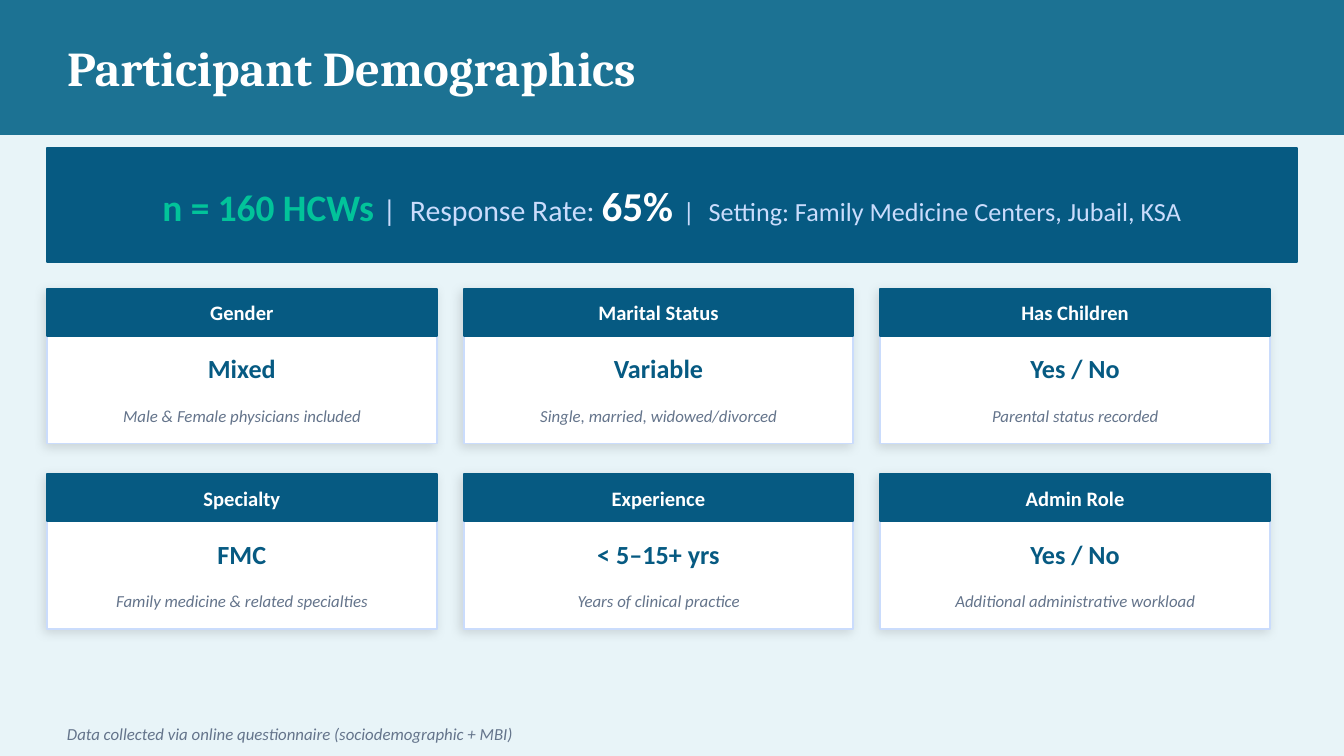
from lxml import etree
from pptx import Presentation
from pptx.dml.color import RGBColor
from pptx.enum.shapes import MSO_SHAPE
from pptx.enum.text import MSO_ANCHOR, MSO_AUTO_SIZE, PP_ALIGN
from pptx.util import Pt

RECT = MSO_SHAPE.RECTANGLE
MID = MSO_ANCHOR.MIDDLE
FIXED = MSO_AUTO_SIZE.NONE
LEFT, CENTER = PP_ALIGN.LEFT, PP_ALIGN.CENTER

INK = {
    "page": "E8F4F8", "band": "1C7293", "navy": "065A82", "white": "FFFFFF",
    "pale": "CADCFC", "mint": "02C39A", "gray": "64748B",
}
SHADE = (
    '<a:effectLst xmlns:a="http://schemas.openxmlformats.org/drawingml/2006/main">'
    '<a:outerShdw blurRad="76200" dist="25400" dir="8100000" algn="bl" rotWithShape="0">'
    '<a:srgbClr val="000000"><a:alpha val="12000"/></a:srgbClr>'
    '</a:outerShdw></a:effectLst>'
)


def tint(name):
    return RGBColor.from_string(INK[name])


class Deck:
    """Holds the style and the current slide; all lengths are in points."""

    def __init__(self, wide, high):
        self.file = Presentation()
        self.file.slide_width, self.file.slide_height = Pt(wide), Pt(high)
        self.slide = self.file.slides.add_slide(self.file.slide_layouts[5])
        fill = self.slide.background.fill
        fill.solid()
        fill.fore_color.rgb = tint("page")

    def style(self, font, size, ink, bold=False, slant=False, face="Calibri"):
        font.name, font.size = face, Pt(size)
        font.bold, font.italic = bold, slant
        font.color.rgb = tint(ink)

    def frame(self, shape, align, inset=True):
        frame = shape.text_frame
        frame.word_wrap, frame.auto_size = True, FIXED
        frame.vertical_anchor = MID
        if not inset:
            frame.margin_left = frame.margin_right = 0
            frame.margin_top = frame.margin_bottom = 0
        par = frame.paragraphs[0]
        par.alignment = align
        return par

    def title(self, box, text):
        shape = self.slide.shapes.title
        shape.left, shape.top, shape.width, shape.height = map(Pt, box)
        par = self.frame(shape, LEFT)
        par.text = text
        self.style(par.font, 26, "white", bold=True, face="Cambria")
        # Bring the title in front of its band
        self.slide.shapes._spTree.append(shape._element)

    def panel(self, box, fill, line, shade=False):
        shape = self.slide.shapes.add_shape(RECT, *map(Pt, box))
        shape.shadow.inherit = False
        shape.fill.solid()
        shape.fill.fore_color.rgb = tint(fill)
        shape.line.color.rgb = tint(line)
        shape.line.width = Pt(1)
        if shade:
            props = shape._element.spPr
            props.replace(props.find("{*}effectLst"), etree.fromstring(SHADE))

    def label(self, box, text, size, ink, bold=False, slant=False,
              align=CENTER, inset=False):
        shape = self.slide.shapes.add_textbox(*map(Pt, box))
        par = self.frame(shape, align, inset)
        par.text = text
        self.style(par.font, size, ink, bold, slant)

    def strip(self, box, runs):
        shape = self.slide.shapes.add_textbox(*map(Pt, box))
        par = self.frame(shape, CENTER)
        for text, size, ink, bold, gap in runs:
            run = par.add_run()
            run.text = text
            self.style(run.font, size, ink, bold)
            if gap:  # letter spacing, in hundredths of a point
                run._r.get_or_add_rPr().set("spc", str(gap))

    def card(self, x, y, head, value, note):
        wide = 208.8
        top = (x, y, wide, 25.2)
        self.panel((x, y, wide, 82.8), "white", "pale", shade=True)
        self.panel(top, "navy", "navy")
        self.label(top, head, 11, "white", bold=True)
        self.label((x, y + 27.36, wide, 30.24), value, 14, "navy", bold=True)
        self.label((x + 7.2, y + 57.6, wide - 14.4, 20.16), note, 9, "gray", slant=True)


def main():
    deck = Deck(720, 405)

    # Title band
    deck.panel((0, 0, 720, 72), "band", "band")
    deck.title((28.8, 0, 662.4, 72), "Participant Demographics")

    # Key figures
    box = (25.2, 79.2, 669.6, 61.2)
    deck.panel(box, "navy", "navy")
    deck.strip(box, [
        ("n = 160 HCWs ", 20, "mint", True, 0),
        ("| ", 16, "pale", False, 180),
        ("Response Rate: ", 16, "pale", False, 0),
        ("65%", 22, "white", True, 0),
        (" | ", 14, "pale", False, 210),
        ("Setting: Family Medicine Centers, Jubail, KSA", 14, "pale", False, 0),
    ])

    # Cards, three to a row
    cards = [
        ("Gender", "Mixed", "Male & Female physicians included"),
        ("Marital Status", "Variable", "Single, married, widowed/divorced"),
        ("Has Children", "Yes / No", "Parental status recorded"),
        ("Specialty", "FMC", "Family medicine & related specialties"),
        ("Experience", "< 5–15+ yrs", "Years of clinical practice"),
        ("Admin Role", "Yes / No", "Additional administrative workload"),
    ]
    for i, card in enumerate(cards):
        row, col = divmod(i, 3)
        deck.card(25.2 + 223.2 * col, 154.8 + 99.36 * row, *card)

    # Source note
    deck.label((28.8, 385.2, 662.4, 15.84),
               "Data collected via online questionnaire (sociodemographic + MBI)",
               9, "gray", slant=True, align=LEFT, inset=True)

    deck.file.save("out.pptx")


if __name__ == "__main__":
    main()
